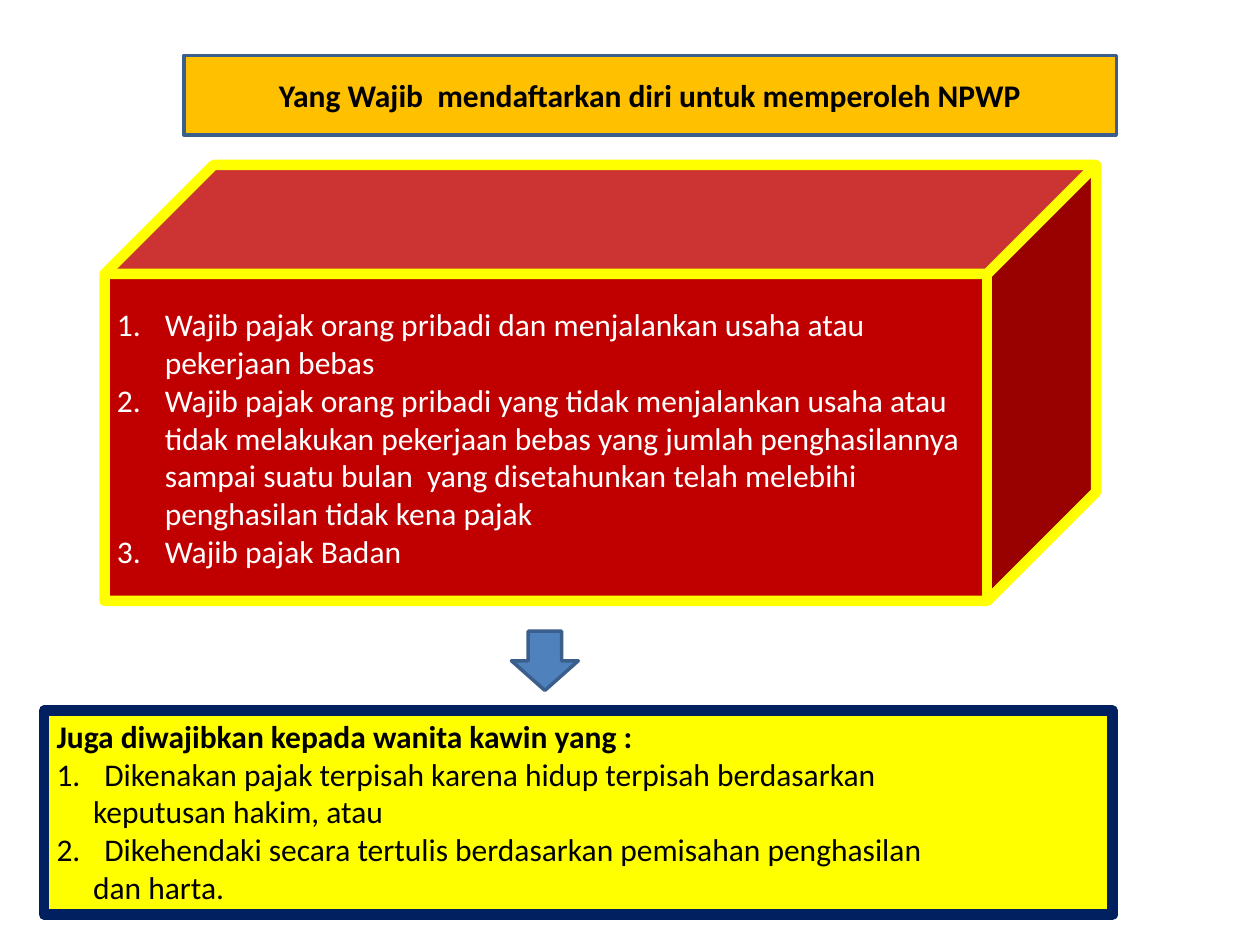
"""Builds the slide on who must register for an NPWP."""
from lxml.etree import SubElement
from pptx import Presentation
from pptx.dml.color import RGBColor
from pptx.enum.shapes import MSO_SHAPE
from pptx.enum.text import MSO_ANCHOR, PP_ALIGN
from pptx.oxml.ns import qn
from pptx.util import Inches, Pt


def paint(shape, fill, line, width):
    shape.fill.solid()
    shape.fill.fore_color.rgb = RGBColor.from_string(fill)
    shape.line.color.rgb = RGBColor.from_string(line)
    shape.line.width = Pt(width)


def write(frame, rows, color, align=PP_ALIGN.LEFT):
    frame.word_wrap = True
    for i, (text, bold, left, start) in enumerate(rows):
        para = frame.add_paragraph() if i else frame.paragraphs[0]
        para.text = text
        para.alignment = align
        para.font.name = "Calibri"
        para.font.size = Pt(18)
        para.font.bold = bold
        para.font.color.rgb = RGBColor.from_string(color)
        props = para._p.get_or_add_pPr()
        props.set("marL", str(Inches(left)))
        props.set("indent", str(-Inches(left) if start else 0))
        if start:
            mark = SubElement(props, qn("a:buFont"), typeface="+mj-lt")
            mark = SubElement(props, qn("a:buAutoNum"), type="arabicPeriod")
            if start > 1:
                mark.set("startAt", str(start))
            props.append(props.find(qn("a:defRPr")))


deck = Presentation()
deck.slide_width, deck.slide_height = Inches(10), Inches(7.5)
slide = deck.slides.add_slide(deck.slide_layouts[5])

title = slide.shapes.title
title.left, title.top = Inches(1.46), Inches(0.44)
title.width, title.height = Inches(7.4), Inches(0.63)
paint(title, "FFC000", "3A5F8C", 2)
title.text_frame.vertical_anchor = MSO_ANCHOR.MIDDLE
write(title.text_frame, [("Yang Wajib  mendaftarkan diri untuk memperoleh NPWP", True, 0, 0)],
      "000000", PP_ALIGN.CENTER)

shapes = []
for kind, box, fill, line, width in [
    (MSO_SHAPE.CUBE, (0.83, 1.31, 7.87, 3.46), "C00000", "FFFF00", 6),
    (MSO_SHAPE.DOWN_ARROW, (4.06, 5.01, 0.53, 0.47), "4F81BD", "3A5F8C", 2),
    (MSO_SHAPE.RECTANGLE, (0.35, 5.64, 8.48, 1.62), "FFFF00", "002060", 6),
]:
    shape = slide.shapes.add_shape(kind, *map(Inches, box))
    shape.shadow.inherit = False
    paint(shape, fill, line, width)
    shapes.append(shape)
cube, arrow, note = shapes

cube.text_frame.vertical_anchor = MSO_ANCHOR.MIDDLE
write(cube.text_frame, [
    ("Wajib pajak orang pribadi dan menjalankan usaha atau pekerjaan bebas", False, 0.38, 1),
    ("Wajib pajak orang pribadi yang tidak menjalankan usaha atau tidak melakukan "
     "pekerjaan bebas yang jumlah penghasilannya sampai suatu bulan  yang "
     "disetahunkan telah melebihi penghasilan tidak kena pajak", False, 0.38, 1),
    ("Wajib pajak Badan", False, 0.38, 1),
], "FFFFFF")

note.text_frame.vertical_anchor = MSO_ANCHOR.TOP
write(note.text_frame, [
    ("Juga diwajibkan kepada wanita kawin yang :", True, 0, 0),
    ("Dikenakan pajak terpisah karena hidup terpisah berdasarkan", False, 0.38, 1),
    ("keputusan hakim, atau", False, 0.29, 0),
    ("Dikehendaki secara tertulis berdasarkan pemisahan penghasilan", False, 0.38, 2),
    ("dan harta.", False, 0.29, 0),
], "000000")

deck.save("out.pptx")
